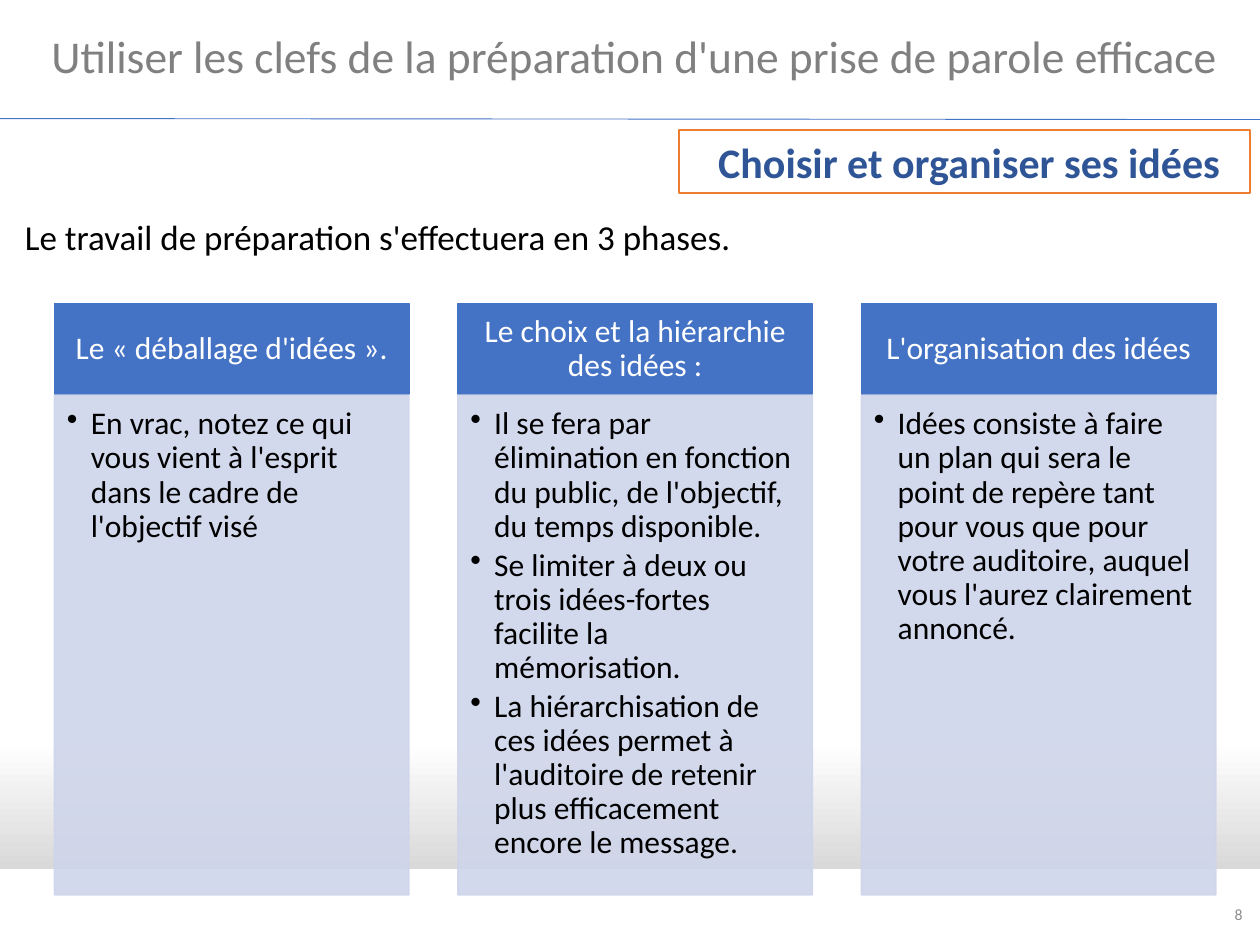
import collections

import pptx
import pptx.dml.color
import pptx.enum.shapes
import pptx.enum.text
import pptx.oxml.ns
import pptx.util
from lxml import etree

Cm = pptx.util.Cm
Pt = pptx.util.Pt
ALIGN = pptx.enum.text.PP_ALIGN
ANCHOR = pptx.enum.text.MSO_ANCHOR
RECTANGLE = pptx.enum.shapes.MSO_SHAPE.RECTANGLE

Box = collections.namedtuple("Box", "left top width height")

COLOURS = {
    "white": "FFFFFF",
    "black": "000000",
    "shade": "D9D9D9",
    "title": "808080",
    "number": "8C8C8C",
    "blue": "4472C4",
    "navy": "2F5597",
    "orange": "ED7D31",
    "pale": "CFD5EA",
}

PHASES = [
    ("Le « déballage d'idées ».",
     ["En vrac, notez ce qui vous vient à l'esprit dans le cadre de l'objectif visé"]),
    ("Le choix et la hiérarchie des idées :",
     ["Il se fera par élimination en fonction du public, de l'objectif, du temps disponible.",
      "Se limiter à deux ou trois idées-fortes facilite la mémorisation.",
      "La hiérarchisation de ces idées permet à l'auditoire de retenir plus efficacement "
      "encore le message."]),
    ("L'organisation des idées",
     ["Idées consiste à faire un plan qui sera le point de repère tant pour vous que pour "
      "votre auditoire, auquel vous l'aurez clairement annoncé."]),
]


def colour(name):
    """Return the named colour as an RGBColor."""
    return pptx.dml.color.RGBColor.from_string(COLOURS[name])


def place(shape, box):
    """Move and size a shape to a box given in centimetres."""
    shape.left, shape.top, shape.width, shape.height = (Cm(length) for length in box)


def write(shape, text, size, ink, align=ALIGN.LEFT, anchor=ANCHOR.TOP,
          insets=(0.25, 0.13, 0.25, 0.13), bold=False):
    """Fill a shape with text in one uniform style."""
    frame = shape.text_frame
    frame.text = text
    frame.word_wrap = True
    frame.auto_size = pptx.enum.text.MSO_AUTO_SIZE.NONE
    frame.vertical_anchor = anchor
    frame.margin_left, frame.margin_top, frame.margin_right, frame.margin_bottom = (
        Cm(inset) for inset in insets)
    for para in frame.paragraphs:
        para.alignment = align
        para.space_before = Pt(0)
        for span in para.runs:
            span.font.name = "Calibri"
            span.font.size = Pt(size)
            span.font.bold = bold
            span.font.color.rgb = colour(ink)


def set_bullet(para, indent, character=None):
    """Give a paragraph a hanging bullet, or none at all."""
    properties = para._p.get_or_add_pPr()
    properties.set("marL", str(int(Cm(indent))))
    properties.set("indent", str(-int(Cm(indent))))
    if character:
        etree.SubElement(properties, pptx.oxml.ns.qn("a:buChar")).set("char", character)
    else:
        etree.SubElement(properties, pptx.oxml.ns.qn("a:buNone"))


def add_panel(page, box, fill, line, alpha=None):
    """Add a rectangle with a fill and a one-point outline."""
    panel = page.shapes.add_shape(RECTANGLE, *(Cm(length) for length in box))
    panel.shadow.inherit = False
    panel.fill.solid()
    panel.fill.fore_color.rgb = colour(fill)
    panel.line.color.rgb = colour(line)
    panel.line.width = Pt(1)
    if alpha:
        for tint in panel._element.spPr.iter(pptx.oxml.ns.qn("a:srgbClr")):
            etree.SubElement(tint, pptx.oxml.ns.qn("a:alpha")).set("val", str(alpha * 1000))
    return panel


def add_backdrop(page, box):
    """Add the band that fades from white down to grey."""
    band = page.shapes.add_shape(RECTANGLE, *(Cm(length) for length in box))
    band.shadow.inherit = False
    band.line.fill.background()
    band.fill.gradient()
    band.fill.gradient_angle = 270
    for stop, position, name in zip(band.fill.gradient_stops, (0.61, 1), ("white", "shade")):
        stop.position = position
        stop.color.rgb = colour(name)


def add_header(page, box):
    """Place the title, the rule under it and the framed subject."""
    title = page.shapes.title
    place(title, Box(box.left + 0.2, box.top + 0.43, box.width - 0.2, 1.37))
    write(title, "Utiliser les clefs de la préparation d'une prise de parole efficace",
          26, "title", ALIGN.CENTER)
    rule = page.shapes.add_connector(
        pptx.enum.shapes.MSO_CONNECTOR.STRAIGHT, Cm(box.left), Cm(box.top + 2.39),
        Cm(box.left + box.width), Cm(box.top + 2.41))
    rule.line.color.rgb = colour("blue")
    rule.line.width = Pt(0.5)
    etree.SubElement(rule._element.spPr, pptx.oxml.ns.qn("a:effectLst"))
    subject = add_panel(page, Box(box.left + 13.69, box.top + 2.62, 11.51, 1.27),
                        "white", "orange")
    write(subject, " Choisir et organiser ses idées", 24, "navy", ALIGN.CENTER, bold=True)


def add_introduction(page, box):
    """Place the sentence that announces the phases."""
    body = page.placeholders[1]
    place(body, box)
    write(body, "Le travail de préparation s'effectuera en 3 phases.", 20, "black")
    set_bullet(body.text_frame.paragraphs[0], 0)


def add_phase(page, box, heading, ideas):
    """Add one phase: a heading over its bulleted panel."""
    head = add_panel(page, Box(box.left, box.top, box.width, 1.83), "blue", "blue")
    write(head, heading, 18, "white", ALIGN.CENTER, ANCHOR.MIDDLE, (0.36, 0.2, 0.36, 0.2))
    head.text_frame.paragraphs[0].line_spacing = 0.9
    panel = add_panel(page, Box(box.left, box.top + 1.85, box.width, box.height - 1.85),
                      "pale", "pale", alpha=90)
    write(panel, "\n".join(ideas), 18, "black", insets=(0.25, 0.25, 0.36, 0.41))
    for para in panel.text_frame.paragraphs:
        para.line_spacing = 0.9
        para.space_after = Pt(3)
        set_bullet(para, 0.48, "•")


def add_phases(page, box, gap=0.99):
    """Spread the phases in equal columns across a box."""
    width = (box.width - gap * (len(PHASES) - 1)) / len(PHASES)
    for index, (heading, ideas) in enumerate(PHASES):
        column = Box(box.left + index * (width + gap), box.top, width, box.height)
        add_phase(page, column, heading, ideas)


def add_page_number(page, box):
    """Place the page number in the lower right corner."""
    number = page.shapes.add_textbox(*(Cm(length) for length in box))
    write(number, "8", 9, "number", ALIGN.RIGHT, ANCHOR.MIDDLE)


def main():
    """Build the slide and save it."""
    deck = pptx.Presentation()
    deck.slide_width, deck.slide_height = Cm(25.4), Cm(19.05)
    page = deck.slides.add_slide(deck.slide_layouts[1])
    add_backdrop(page, Box(0, 10.92, 25.4, 6.6))
    add_header(page, Box(0, 0, 25.4, 3.9))
    add_introduction(page, Box(0.25, 4.22, 24.9, 1.12))
    add_phases(page, Box(1.1, 6.12, 23.41, 11.92))
    add_page_number(page, Box(19.38, 17.93, 5.92, 1.02))
    deck.save("out.pptx")


if __name__ == "__main__":
    main()
